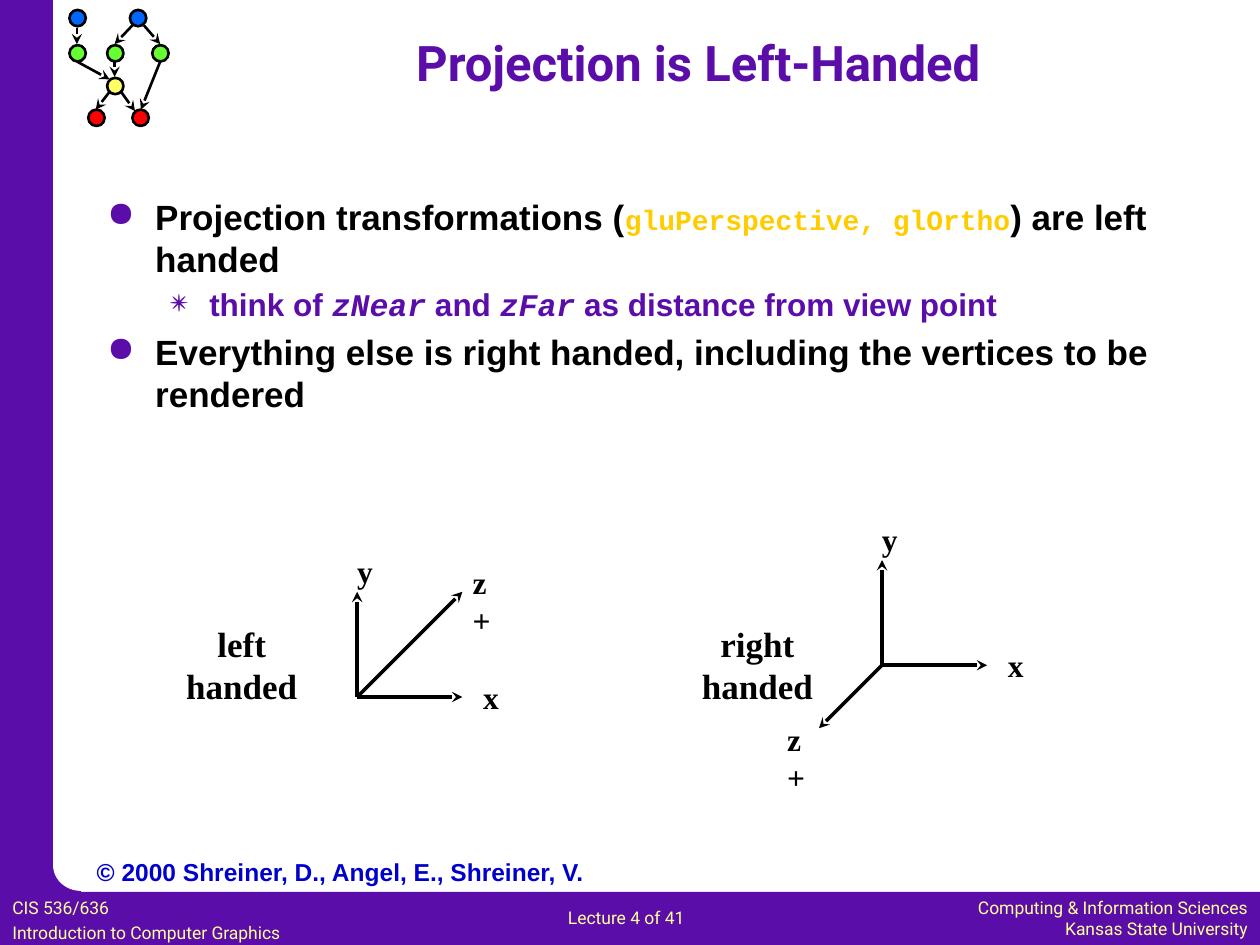
"""Build the slide on left-handed projection with its two sets of coordinate axes."""
from lxml import etree
from pptx import Presentation
from pptx import util as u
from pptx.dml.color import RGBColor
from pptx.enum import shapes, text
from pptx.oxml.ns import qn

COLORS = {
    "purple": "5B0DAA", "white": "FFFFFF", "black": "000000", "cream": "FFFF99",
    "gold": "FFCC00", "navy": "0000CC", "blue": "0066FF", "green": "66FF33",
    "yellow": "FFFF66", "red": "FF0000",
}
LEFT, CENTER, RIGHT = text.PP_ALIGN.LEFT, text.PP_ALIGN.CENTER, text.PP_ALIGN.RIGHT
SERIF = "Times New Roman"


def add_run(p, words, size, font, color, bold=False, italic=False):
    r = p.add_run()
    r.text = words
    r.font.size = u.Pt(size)
    r.font.name = font
    r.font.bold = bold
    r.font.italic = italic
    r.font.color.rgb = RGBColor.from_string(COLORS[color])


def add_arrow(s, x1, y1, x2, y2, width):
    sp = s.shapes.add_connector(
        shapes.MSO_CONNECTOR.STRAIGHT, u.Cm(x1), u.Cm(y1), u.Cm(x2), u.Cm(y2))
    sp.line.color.rgb = RGBColor.from_string(COLORS["black"])
    sp.line.width = u.Pt(width)
    etree.SubElement(sp.line._get_or_add_ln(), qn("a:tailEnd"), type="stealth")
    etree.SubElement(sp._element.spPr, qn("a:effectLst"))


prs = Presentation()
prs.slide_width, prs.slide_height = u.Cm(25.4), u.Cm(19.05)
s = prs.slides.add_slide(prs.slide_layouts[5])

RECT, OVAL = shapes.MSO_SHAPE.RECTANGLE, shapes.MSO_SHAPE.OVAL
frame = [
    (RECT, 0, 17.98, 25.4, 1.07, "purple"),
    (RECT, 0, 0, 1.07, 19.05, "purple"),
    (RECT, 0.51, 17.4, 1.12, 1.12, "purple"),
    (OVAL, 1.07, 16.92, 1.12, 1.04, "white"),
]
nodes = [
    (1.4, 0.91, "green"), (1.4, 0.2, "blue"), (2.16, 0.91, "green"),
    (2.62, 0.2, "blue"), (3.07, 0.91, "green"), (2.16, 1.57, "yellow"),
    (1.78, 2.21, "red"), (2.67, 2.21, "red"),
]
graph = [(OVAL, x, y, 0.33, 0.33, color) for x, y, color in nodes]
for kind, x, y, w, h, color in frame + graph:
    sp = s.shapes.add_shape(kind, u.Cm(x), u.Cm(y), u.Cm(w), u.Cm(h))
    sp.shadow.inherit = False
    sp.fill.solid()
    sp.fill.fore_color.rgb = RGBColor.from_string(COLORS[color])
    if (w, h) == (0.33, 0.33):
        sp.line.color.rgb = RGBColor.from_string(COLORS["black"])
        sp.line.width = u.Pt(1.5)
    else:
        sp.line.fill.background()

edges = [
    (1.55, 0.56, 1.55, 0.89), (2.67, 0.51, 2.31, 0.89), (2.9, 0.51, 3.23, 0.89),
    (1.55, 1.24, 2.21, 1.6), (2.31, 1.24, 2.31, 1.55), (3.23, 1.24, 2.84, 2.21),
    (2.44, 1.85, 2.72, 2.24), (2.21, 1.85, 1.93, 2.21),
]
for edge in edges:
    add_arrow(s, *edge, 1.5)

title = s.shapes.title
title.left, title.top, title.width, title.height = u.Cm(3.18), u.Cm(0.2), u.Cm(21.79), u.Cm(2.11)
tf = title.text_frame
tf.vertical_anchor = text.MSO_ANCHOR.MIDDLE
p = tf.paragraphs[0]
p.alignment = CENTER
add_run(p, "Projection is Left-Handed", 28, "Roboto", "purple", True)

top_level = (0.97, 0.97, "●", 4)
sub_level = (2.06, 0.79, "✴", 3.6)
points = [
    (0, top_level, [
        ("Projection transformations (", 20, "Arial", "black", True),
        ("gluPerspective, glOrtho", 16, "Courier New", "gold", True),
        (") are left handed", 20, "Arial", "black", True)]),
    (1, sub_level, [
        ("think of ", 18, "Arial", "purple", True),
        ("zNear", 18, "Courier New", "purple", True, True),
        (" and ", 18, "Arial", "purple", True),
        ("zFar", 18, "Courier New", "purple", True, True),
        (" as distance from view point", 18, "Arial", "purple", True)]),
    (0, top_level, [
        ("Everything else is right handed, including the vertices to be rendered",
         20, "Arial", "black", True)]),
]
tf = s.shapes.add_textbox(u.Cm(1.91), u.Cm(3.81), u.Cm(22.07), u.Cm(13.13)).text_frame
tf.word_wrap = True
for i, (level, (margin, hanging, bullet, gap), runs) in enumerate(points):
    p = tf.add_paragraph() if i else tf.paragraphs[0]
    p.level = level
    pPr = p._p.get_or_add_pPr()
    pPr.set("marL", str(u.Cm(margin)))
    pPr.set("indent", str(-u.Cm(hanging)))
    buClr = etree.SubElement(pPr, qn("a:buClr"))
    etree.SubElement(buClr, qn("a:srgbClr"), val=COLORS["purple"])
    etree.SubElement(pPr, qn("a:buChar"), char=bullet)
    if i:
        p.space_before = u.Pt(gap)
    for run in runs:
        add_run(p, *run)

labels = [
    (18.24, 17.96, 7.16, 1.09, RIGHT, 0,
     ["Computing & Information Sciences", "Kansas State University"],
     (10, "Roboto", "cream")),
    (0, 17.96, 7.49, 1.12, LEFT, 2,
     ["CIS 536/636", "Introduction to Computer Graphics"], (10, "Roboto", "cream")),
    (11.2, 18.16, 3.61, 0.69, LEFT, 0, ["Lecture 4 of 41"], (10, "Roboto", "cream")),
    (1.7, 17.15, 10.41, 0.84, LEFT, 0,
     ["© 2000 Shreiner, D., Angel, E., Shreiner, V."], (14, "Arial", "navy", True)),
]
axes = [
    (7.2, 14.05, (2.12, -2.12), (2.08, -2.82)),
    (17.78, 13.41, (-1.27, 1.27), (-2.16, 0.99)),
]
for x, y, z_tip, z_label in axes:
    for dx, dy in [(0, -2.12), (2.12, 0), z_tip]:
        add_arrow(s, x, y, x + dx, y + dy, 2)
    for name, (dx, dy), w in [
            ("x", (2.29, -0.51), 0.84), ("y", (-0.25, -3.05), 0.84), ("z+", z_label, 1.14)]:
        labels.append((x + dx, y + dy, w, 1.02, LEFT, 0, [name], (18, SERIF, "black", True)))

for x, y, w, h, align, gap, lines, style in labels:
    tf = s.shapes.add_textbox(u.Cm(x), u.Cm(y), u.Cm(w), u.Cm(h)).text_frame
    tf.word_wrap = False
    for i, line in enumerate(lines):
        p = tf.add_paragraph() if i else tf.paragraphs[0]
        p.alignment = align
        if i:
            p.space_before = u.Pt(gap)
        add_run(p, line, *style)

for x, w, caption in [(2.92, 3.91, "left handed"), (13.06, 4.42, "right handed")]:
    tf = s.shapes.add_textbox(u.Cm(x), u.Cm(12.42), u.Cm(w), u.Cm(1.09)).text_frame
    tf.word_wrap = True
    tf.margin_left = tf.margin_right = u.Cm(0.6)
    p = tf.paragraphs[0]
    p.alignment = CENTER
    add_run(p, caption, 20, SERIF, "black", True)

prs.save("out.pptx")
